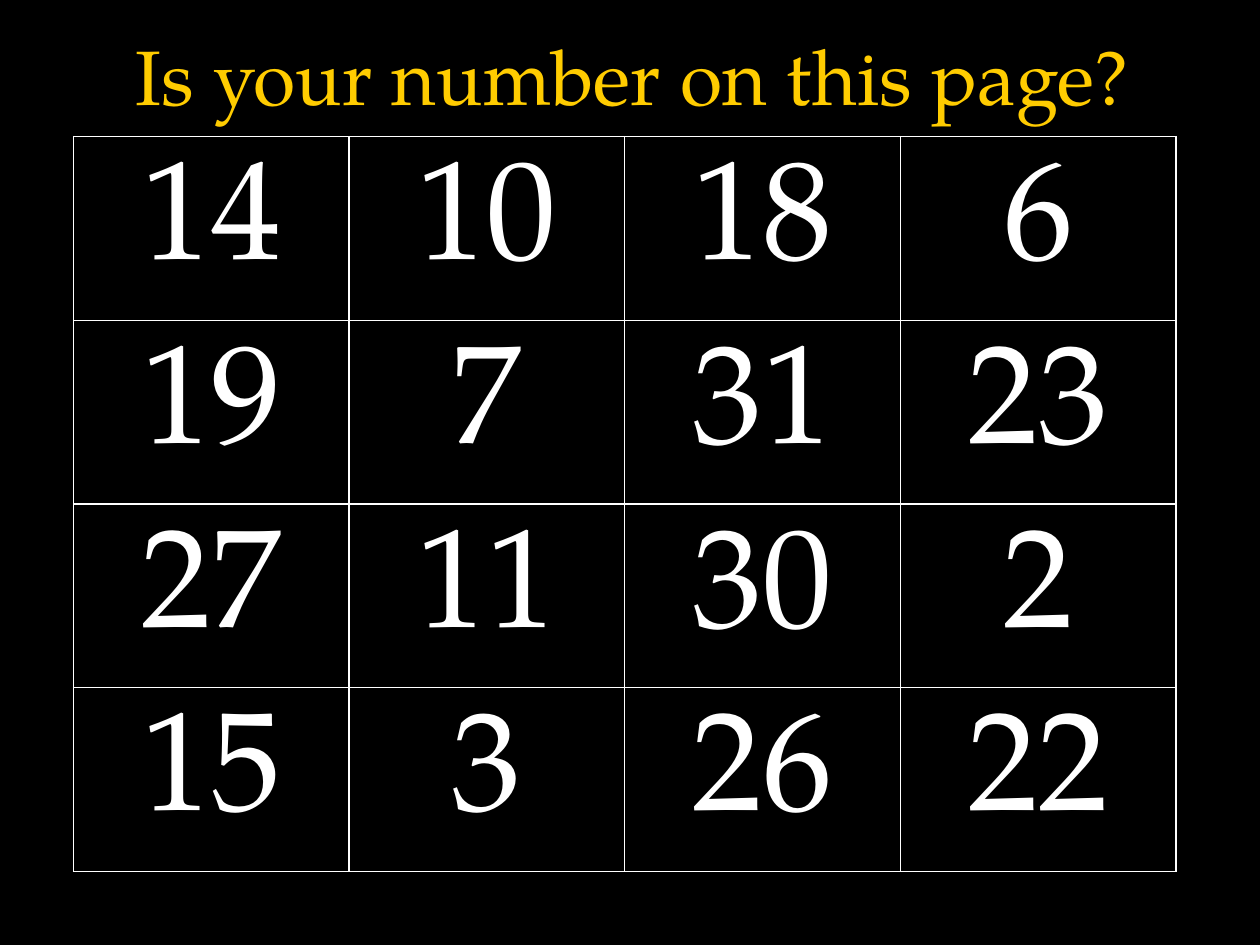
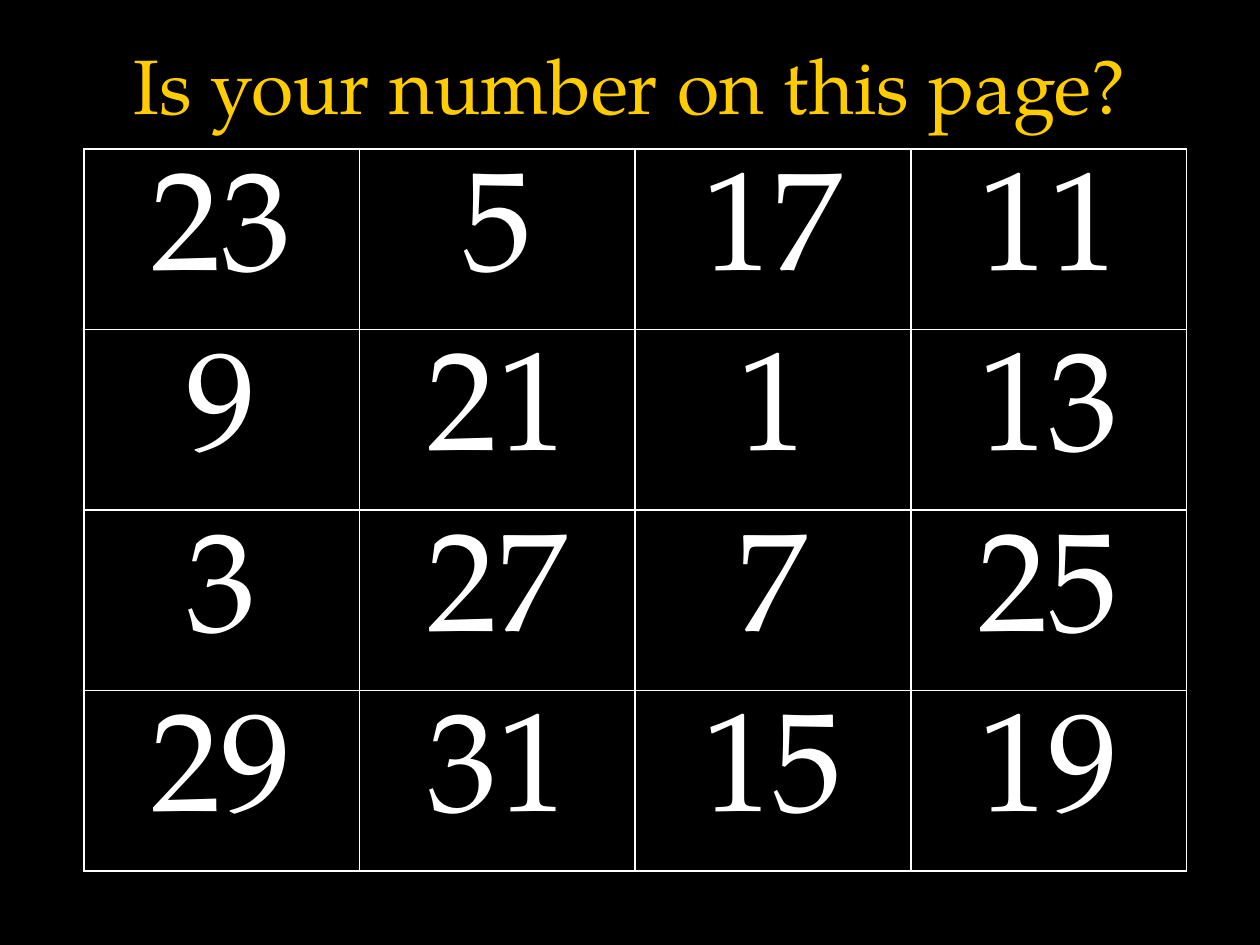
"""Build two number-card slides, each a title over a grid of numbers."""
from lxml.etree import SubElement
from pptx import Presentation
from pptx.dml.color import RGBColor
from pptx.enum.text import MSO_ANCHOR, MSO_AUTO_SIZE, PP_ALIGN
from pptx.oxml.ns import qn
from pptx.util import Pt

TITLE = "Is your number on this page?"
CARDS = [
    {
        "title": (49.5, 12.5),
        "grid": (42, 78, 630, 420),
        "rows": [(14, 10, 18, 6), (19, 7, 31, 23), (27, 11, 30, 2), (15, 3, 26, 22)],
    },
    {
        "title": (48, 18),
        "grid": (48, 85, 630, 412.8),
        "rows": [(23, 5, 17, 11), (9, 21, 1, 13), (3, 27, 7, 25), (29, 31, 15, 19)],
    },
]
FONT = "TeX Gyre Pagella"
COLORS = {"back": "000000", "title": "FFCC00", "text": "FFFFFF", "line": "FFFFFF"}


def write(frame, text, size, color):
    frame.word_wrap = True
    frame.text = text
    para = frame.paragraphs[0]
    para.alignment = PP_ALIGN.CENTER
    font = para.runs[0].font
    font.name, font.size, font.bold = FONT, Pt(size), False
    font.color.rgb = RGBColor.from_string(COLORS[color])


def border(cell, width):
    props = cell._tc.get_or_add_tcPr()
    for side in ("lnL", "lnR", "lnT", "lnB"):
        line = SubElement(props, qn(f"a:{side}"), w=str(Pt(width)))
        fill = SubElement(line, qn("a:solidFill"))
        SubElement(fill, qn("a:srgbClr"), val=COLORS["line"])


def add_title(slide, left, top):
    title = slide.shapes.title
    title.left, title.top = Pt(left), Pt(top)
    title.width, title.height = Pt(624), Pt(60.5)
    frame = title.text_frame
    write(frame, TITLE, size=44, color="title")
    frame.auto_size = MSO_AUTO_SIZE.NONE
    frame.vertical_anchor = MSO_ANCHOR.TOP


def add_grid(slide, rows, box):
    table = slide.shapes.add_table(len(rows), len(rows[0]), *map(Pt, box)).table
    table.first_row = table.horz_banding = False
    for r, row in enumerate(rows):
        for c, number in enumerate(row):
            cell = table.cell(r, c)
            border(cell, width=1)
            cell.fill.background()
            cell.vertical_anchor = MSO_ANCHOR.MIDDLE
            write(cell.text_frame, str(number), size=80, color="text")


def main():
    deck = Presentation()
    deck.slide_width, deck.slide_height = Pt(720), Pt(540)
    back = deck.slide_master.background.fill
    back.solid()
    back.fore_color.rgb = RGBColor.from_string(COLORS["back"])
    for card in CARDS:
        slide = deck.slides.add_slide(deck.slide_layouts.get_by_name("Title Only"))
        add_title(slide, *card["title"])
        add_grid(slide, card["rows"], card["grid"])
    deck.save("out.pptx")


if __name__ == "__main__":
    main()
